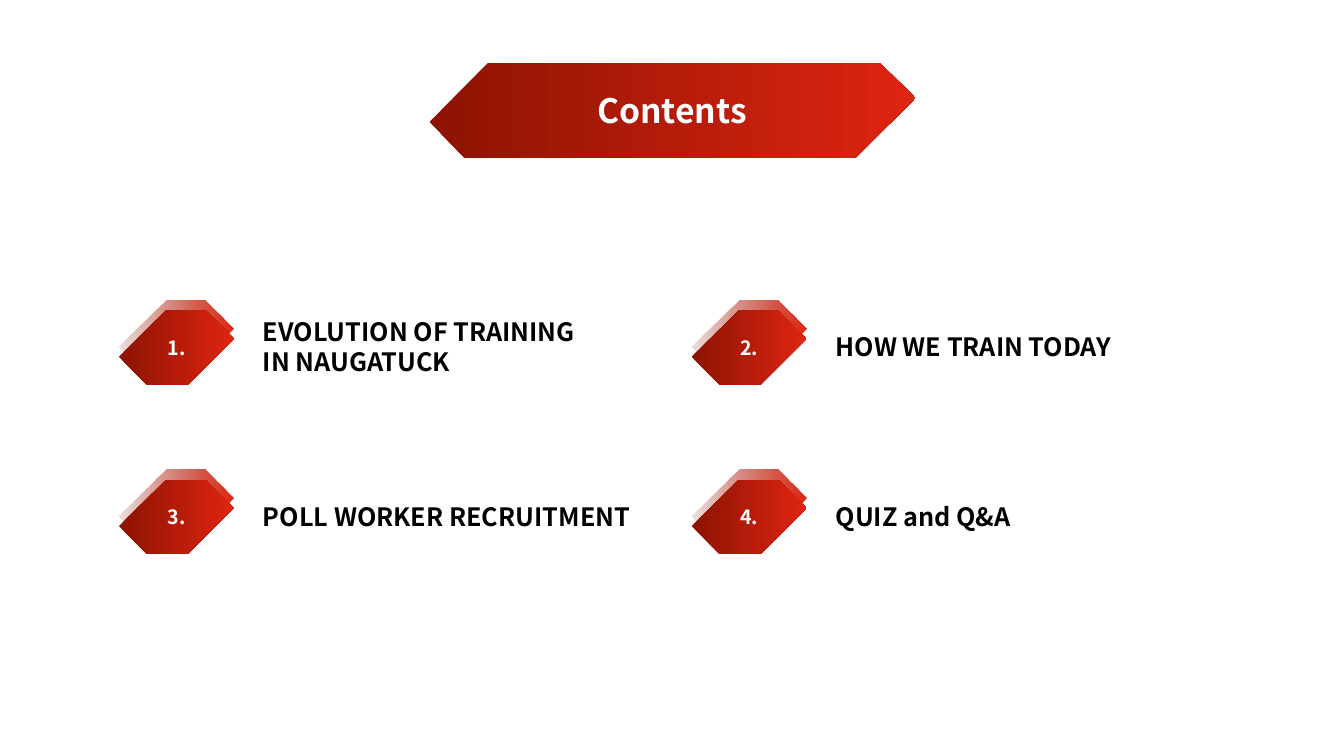
from dataclasses import dataclass

from lxml import etree
from pptx import Presentation
from pptx.dml.color import RGBColor
from pptx.enum.text import MSO_ANCHOR, MSO_AUTO_SIZE, PP_ALIGN
from pptx.oxml.ns import qn
from pptx.util import Inches, Pt


@dataclass(frozen=True)
class Theme:
    font: str = "Noto Sans CJK SC"
    dark_red: RGBColor = RGBColor(0x8C, 0x13, 0x02)
    bright_red: RGBColor = RGBColor(0xDE, 0x25, 0x11)
    white: RGBColor = RGBColor(0xFF, 0xFF, 0xFF)
    black: RGBColor = RGBColor(0, 0, 0)
    title_size: int = 24
    label_size: int = 18
    number_size: int = 14


theme = Theme()


def add_gem(shapes, left, top, outline, start_opacity=100):
    """Draw a closed outline with a red left-to-right gradient."""
    points = [(Inches(left + x), Inches(top + y)) for x, y in outline]
    builder = shapes.build_freeform(*points[0])
    builder.add_line_segments(points[1:], close=True)
    gem = builder.convert_to_shape()
    gem.shadow.inherit = False
    gem.line.fill.background()
    gem.fill.gradient()
    gem.fill.gradient_angle = 0
    start, end = gem.fill.gradient_stops
    start.position, start.color.rgb = 0, theme.dark_red
    end.position, end.color.rgb = 1, theme.bright_red
    if start_opacity < 100:
        first_color = gem.fill._xPr.find(".//" + qn("a:srgbClr"))
        etree.SubElement(first_color, qn("a:alpha"), val=str(start_opacity * 1000))
    return gem


def write(frame, lines, size, color, align):
    for index, line in enumerate(lines):
        paragraph = frame.paragraphs[0] if index == 0 else frame.add_paragraph()
        paragraph.alignment = align
        run = paragraph.add_run()
        run.text = line
        run.font.name = theme.font
        run.font.size = Pt(size)
        run.font.bold = True
        run.font.color.rgb = color


presentation = Presentation()
presentation.slide_width = Inches(13.33)
presentation.slide_height = Inches(7.5)
slide = presentation.slides.add_slide(presentation.slide_layouts[6])

banner_outline = [(0.59, 0), (4.46, 0), (4.82, 0.35), (4.22, 0.95), (0.35, 0.95), (0, 0.59)]
badge_outline = [(0.47, 0), (0.86, 0), (1.14, 0.28), (0.68, 0.74), (0.28, 0.74), (0, 0.46)]

add_gem(slide.shapes, 4.26, 0.62, banner_outline)
title = slide.shapes.add_textbox(Inches(5.81), Inches(0.84), Inches(1.71), Inches(0.5))
title.text_frame.word_wrap = False
title.text_frame.auto_size = MSO_AUTO_SIZE.SHAPE_TO_FIT_TEXT
write(title.text_frame, ["Contents"], theme.title_size, theme.white, PP_ALIGN.CENTER)

# Each topic: its lines, label width and label height
topics = [
    (["EVOLUTION OF TRAINING", "IN NAUGATUCK"], 3.5, 0.71),
    (["HOW WE TRAIN TODAY"], 3.2, 0.4),
    (["POLL WORKER RECRUITMENT"], 3.99, 0.4),
    (["QUIZ and Q&A"], 2.09, 0.4),
]
grid_left, grid_top = 1.18, 2.98
column_pitch, row_pitch = 5.68, 1.68
badge_drop, label_offset, label_middle = 0.1, 1.33, 0.46

for index, (lines, width, height) in enumerate(topics):
    row, column = divmod(index, 2)
    left = grid_left + column * column_pitch
    top = grid_top + row * row_pitch

    badge = slide.shapes.add_group_shape()
    add_gem(badge.shapes, left, top, badge_outline, start_opacity=13)
    number = add_gem(badge.shapes, left, top + badge_drop, badge_outline)
    number.text_frame.vertical_anchor = MSO_ANCHOR.MIDDLE
    write(number.text_frame, [f"{index + 1}."], theme.number_size, theme.white, PP_ALIGN.CENTER)

    label = slide.shapes.add_textbox(
        Inches(left + label_offset), Inches(top + label_middle - height / 2),
        Inches(width), Inches(height))
    label.text_frame.word_wrap = False
    label.text_frame.auto_size = MSO_AUTO_SIZE.SHAPE_TO_FIT_TEXT
    write(label.text_frame, lines, theme.label_size, theme.black, PP_ALIGN.LEFT)

presentation.save("out.pptx")
